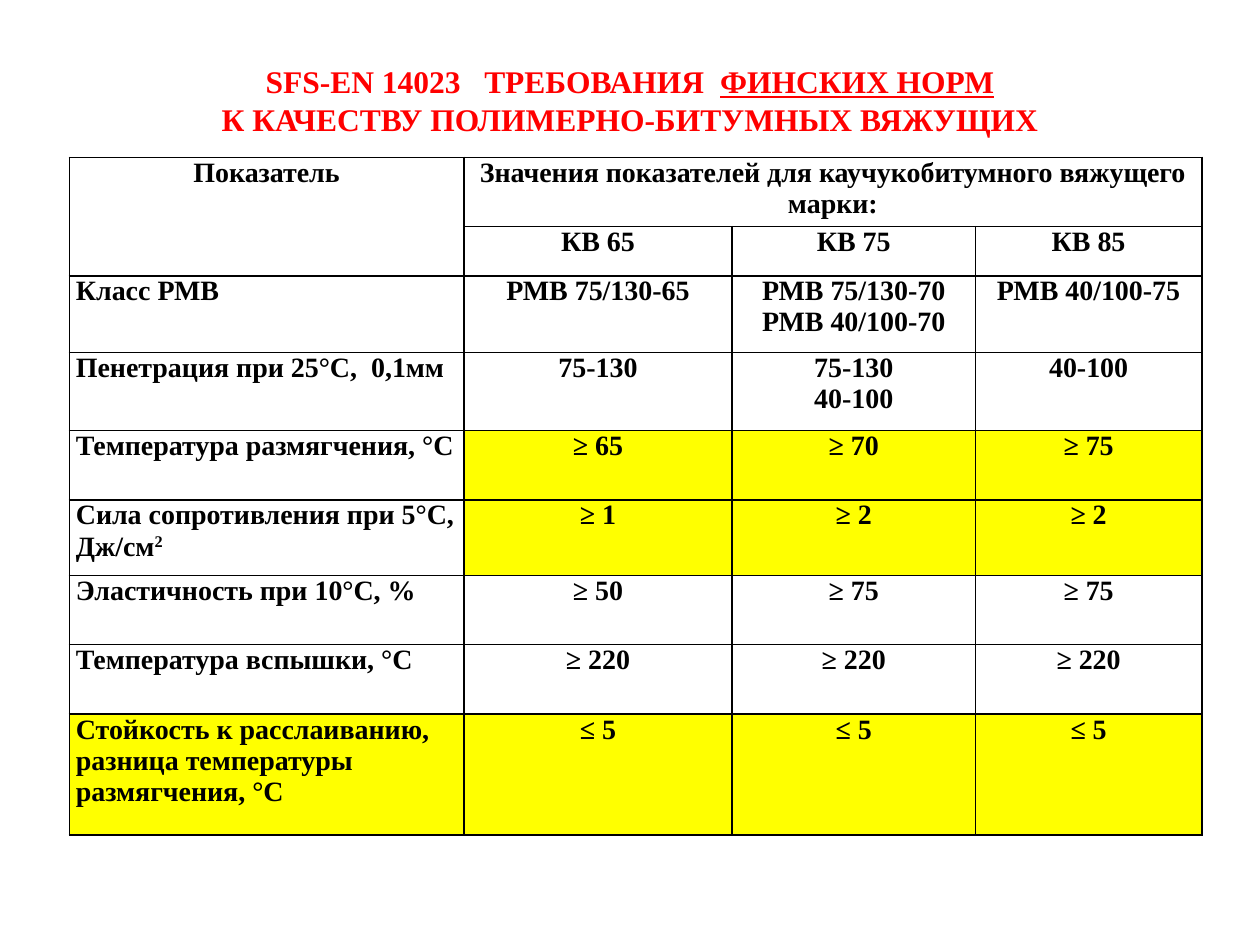
from lxml.etree import SubElement
from pptx import Presentation
from pptx.dml.color import RGBColor
from pptx.enum.text import MSO_ANCHOR as Anchor, PP_ALIGN as Align
from pptx.oxml.ns import qn
from pptx.util import Cm, Pt

COLORS = {"title": "FF0000", "text": "000000", "border": "000000", "highlight": "FFFF00"}
BASE_FONT = {"name": "Times New Roman", "bold": True}
TITLE_FONT = {**BASE_FONT, "size": Pt(18)}
CELL_FONT = {**BASE_FONT, "size": Pt(16)}
CELL_FORMAT = {"margin_left": Cm(0.13), "margin_right": Cm(0.13), "margin_top": 0,
               "margin_bottom": 0, "vertical_anchor": Anchor.TOP}
TITLE_FORMAT = {"word_wrap": True, "vertical_anchor": Anchor.MIDDLE, "margin_bottom": Cm(0.81)}

COLUMN_WIDTHS = [7.95, 5.41, 4.9, 4.57]
ROW_HEIGHTS = [1.4, 0.99, 1.55, 1.57, 1.4, 1.52, 1.4, 1.4, 2.44]
HEADER_ROWS = 2
ROWS = [
    ["Показатель", "Значения показателей для каучукобитумного вяжущего марки:", "", ""],
    ["", "КВ 65", "КВ 75", "КВ 85"],
    ["Класс РМВ", "РМВ 75/130-65", "РМВ 75/130-70\nРМВ 40/100-70", "РМВ 40/100-75"],
    ["Пенетрация при 25°С,  0,1мм", "75-130", "75-130\n40-100", "40-100"],
    ["Температура размягчения, °С", "≥ 65", "≥ 70", "≥ 75"],
    ["Сила сопротивления при 5°С, Дж/см^2", "≥ 1", "≥ 2", "≥ 2"],
    ["Эластичность при 10°С, %", "≥ 50", "≥ 75", "≥ 75"],
    ["Температура вспышки, °С", "≥ 220", "≥ 220", "≥ 220"],
    ["Стойкость к расслаиванию, разница температуры размягчения, °С", "≤ 5", "≤ 5", "≤ 5"],
]
FIRST_HIGHLIGHTED_COLUMN = {4: 1, 5: 1, 8: 0}


def set_attributes(target, values):
    for name, value in values.items():
        setattr(target, name, value)


def add_span(para, text, font, color):
    span = para.add_run()
    span.text = text
    set_attributes(span.font, font)
    span.font.color.rgb = RGBColor.from_string(COLORS[color])
    return span


def place_title(page, left, top, width, height):
    title = page.shapes.title
    set_attributes(title, {"left": left, "top": top, "width": width, "height": height})
    set_attributes(title.text_frame, TITLE_FORMAT)
    para = title.text_frame.paragraphs[0]
    para.alignment = Align.CENTER
    add_span(para, "SFS-EN 14023   ТРЕБОВАНИЯ  ", TITLE_FONT, "title")
    add_span(para, "ФИНСКИХ НОРМ", {**TITLE_FONT, "underline": True}, "title")
    para.add_line_break()
    add_span(para, "К КАЧЕСТВУ ПОЛИМЕРНО-БИТУМНЫХ ВЯЖУЩИХ", TITLE_FONT, "title")


def draw_borders(cell):
    properties = cell._tc.get_or_add_tcPr()
    for side in ("a:lnL", "a:lnR", "a:lnT", "a:lnB"):
        line = SubElement(properties, qn(side), w=str(Pt(1)))
        fill = SubElement(line, qn("a:solidFill"))
        SubElement(fill, qn("a:srgbClr"), val=COLORS["border"])


def write_cell(cell, text, alignment):
    frame = cell.text_frame
    for index, line in enumerate(text.split("\n")):
        para = frame.add_paragraph() if index else frame.paragraphs[0]
        para.alignment = alignment
        base, _, power = line.partition("^")
        if base:
            add_span(para, base, CELL_FONT, "text")
        if power:
            span = add_span(para, power, CELL_FONT, "text")
            span._r.get_or_add_rPr().set("baseline", "30000")


def place_requirements(page, left, top):
    width, height = Cm(sum(COLUMN_WIDTHS)), Cm(sum(ROW_HEIGHTS))
    table = page.shapes.add_table(len(ROWS), len(COLUMN_WIDTHS), left, top, width, height).table
    set_attributes(table, {"first_row": False, "horz_banding": False})
    for column, size in zip(table.columns, COLUMN_WIDTHS):
        column.width = Cm(size)
    for row, size in zip(table.rows, ROW_HEIGHTS):
        row.height = Cm(size)
    table.cell(0, 0).merge(table.cell(1, 0))
    table.cell(0, 1).merge(table.cell(0, 3))
    for row_index, texts in enumerate(ROWS):
        highlight_from = FIRST_HIGHLIGHTED_COLUMN.get(row_index, len(texts))
        for column_index, text in enumerate(texts):
            cell = table.cell(row_index, column_index)
            set_attributes(cell, CELL_FORMAT)
            draw_borders(cell)
            if column_index >= highlight_from:
                cell.fill.solid()
                cell.fill.fore_color.rgb = RGBColor.from_string(COLORS["highlight"])
            else:
                cell.fill.background()
            is_label = column_index == 0 and row_index >= HEADER_ROWS
            write_cell(cell, text, Align.LEFT if is_label else Align.CENTER)


def main():
    deck = Presentation()
    set_attributes(deck, {"slide_width": Cm(25.4), "slide_height": Cm(19.05)})
    page = deck.slides.add_slide(deck.slide_layouts[5])
    place_title(page, Cm(1.27), Cm(0.76), Cm(22.86), Cm(3.18))
    place_requirements(page, Cm(1.4), Cm(3.17))
    deck.save("out.pptx")


if __name__ == "__main__":
    main()
